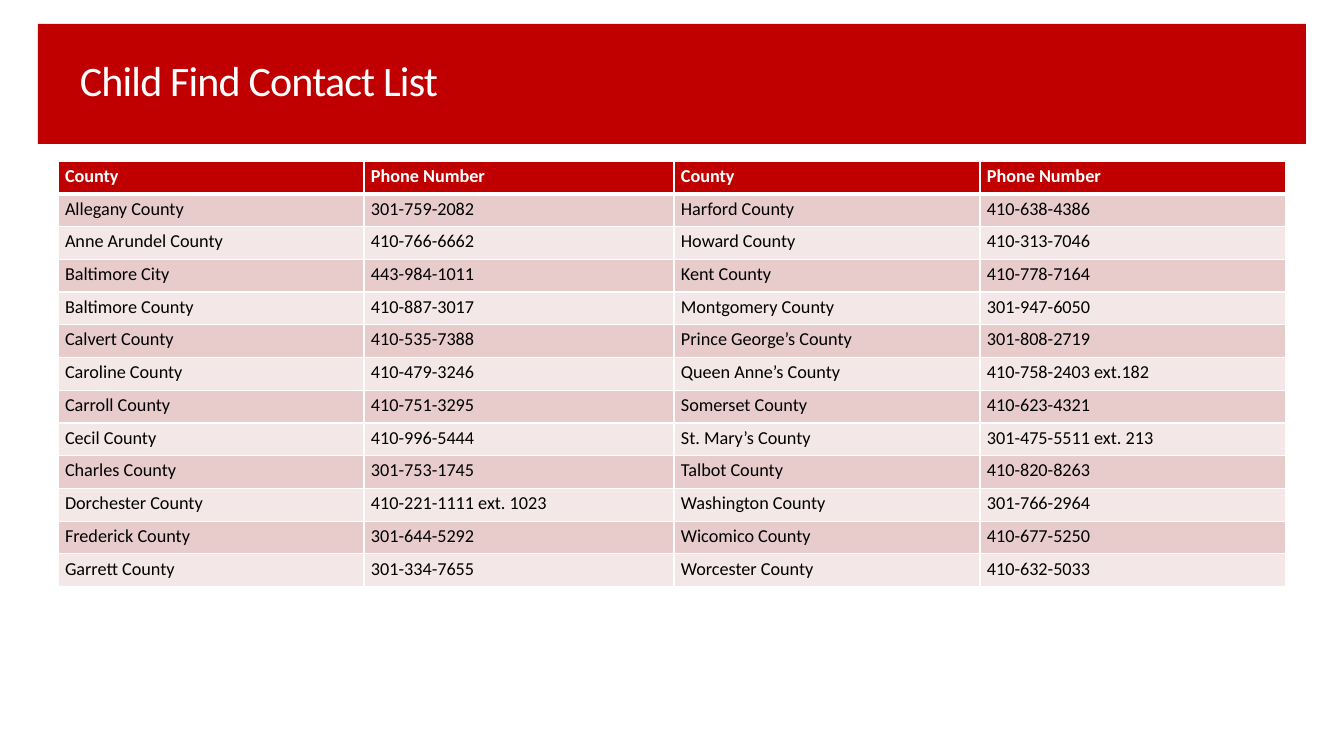
"""Build the Child Find contact list slide: a red title banner over a county phone table."""
from lxml.etree import SubElement
from pptx import Presentation
from pptx.dml.color import RGBColor
from pptx.enum.shapes import MSO_SHAPE as Shape
from pptx.enum.text import MSO_ANCHOR as Anchor
from pptx.oxml.ns import qn
from pptx.util import Emu, Pt

THEME = {
    "font": "Calibri",
    "red": RGBColor.from_string("C00000"),
    "white": RGBColor.from_string("FFFFFF"),
    "black": RGBColor.from_string("000000"),
    "bands": [RGBColor.from_string("F4E7E7"), RGBColor.from_string("E8CCCC")],
    "title_size": Pt(30),
    "table_size": Pt(13),
    "grid_line": Pt(1),
    "header_line": Pt(3),
}

HEADINGS = ("County", "Phone Number") * 2
CONTACTS = [
    ("Allegany County", "301-759-2082", "Harford County", "410-638-4386"),
    ("Anne Arundel County", "410-766-6662", "Howard County", "410-313-7046"),
    ("Baltimore City", "443-984-1011", "Kent County", "410-778-7164"),
    ("Baltimore County", "410-887-3017", "Montgomery County", "301-947-6050"),
    ("Calvert County", "410-535-7388", "Prince George’s County", "301-808-2719"),
    ("Caroline County", "410-479-3246", "Queen Anne’s County", "410-758-2403 ext.182"),
    ("Carroll County", "410-751-3295", "Somerset County", "410-623-4321"),
    ("Cecil County", "410-996-5444", "St. Mary’s County", "301-475-5511 ext. 213"),
    ("Charles County", "301-753-1745", "Talbot County", "410-820-8263"),
    ("Dorchester County", "410-221-1111 ext. 1023", "Washington County", "301-766-2964"),
    ("Frederick County", "301-644-5292", "Wicomico County", "410-677-5250"),
    ("Garrett County", "301-334-7655", "Worcester County", "410-632-5033"),
]
COLUMN_WIDTHS = (306, 310, 306, 306)


def px(count):
    return Emu(round(count * 914400 / 100.8))


def write(para, text, size, color, bold=False):
    span = para.add_run()
    span.text = text
    span.font.color.rgb = color
    for name, value in {"name": THEME["font"], "size": size, "bold": bold}.items():
        setattr(span.font, name, value)
    return span


deck = Presentation()
deck.slide_width, deck.slide_height = px(1344), px(756)
page = deck.slides.add_slide(deck.slide_layouts[6])

banner = page.shapes.add_shape(Shape.RECTANGLE, px(38), px(24), px(1268), px(120))
banner.shadow.inherit = False
banner.fill.solid()
banner.fill.fore_color.rgb = THEME["red"]
banner.line.fill.background()

title_box = page.shapes.add_textbox(px(70), px(33), px(1163), px(100))
title_box.text_frame.word_wrap = True
title_box.text_frame.vertical_anchor = Anchor.MIDDLE
title_para = title_box.text_frame.paragraphs[0]
title_para.line_spacing = 0.9
title_span = write(title_para, "Child Find Contact List", THEME["title_size"], THEME["white"])
title_span.font._element.set("spc", "-60")

rows = [HEADINGS, *CONTACTS]
table = page.shapes.add_table(
    len(rows), len(HEADINGS), px(58), px(161), px(sum(COLUMN_WIDTHS)), px(426)
).table
for column, width in zip(table.columns, COLUMN_WIDTHS):
    column.width = px(width)

cell_format = {
    "margin_left": px(7),
    "margin_right": px(7),
    "margin_top": px(4),
    "margin_bottom": px(4),
    "vertical_anchor": Anchor.TOP,
}
for row_index, row in enumerate(rows):
    is_header = row_index == 0
    thick_edge = {0: "lnB", 1: "lnT"}.get(row_index)
    for column_index, text in enumerate(row):
        cell = table.cell(row_index, column_index)
        for name, value in cell_format.items():
            setattr(cell, name, value)
        properties = cell._tc.get_or_add_tcPr()
        for edge in ("lnL", "lnR", "lnT", "lnB"):
            width = THEME["header_line" if edge == thick_edge else "grid_line"]
            line = SubElement(properties, qn(f"a:{edge}"), w=str(width))
            line_fill = SubElement(line, qn("a:solidFill"))
            SubElement(line_fill, qn("a:srgbClr"), val=str(THEME["white"]))
        cell.fill.solid()
        cell.fill.fore_color.rgb = THEME["red"] if is_header else THEME["bands"][row_index % 2]
        text_color = THEME["white" if is_header else "black"]
        write(cell.text_frame.paragraphs[0], text, THEME["table_size"], text_color, is_header)

deck.save("out.pptx")
